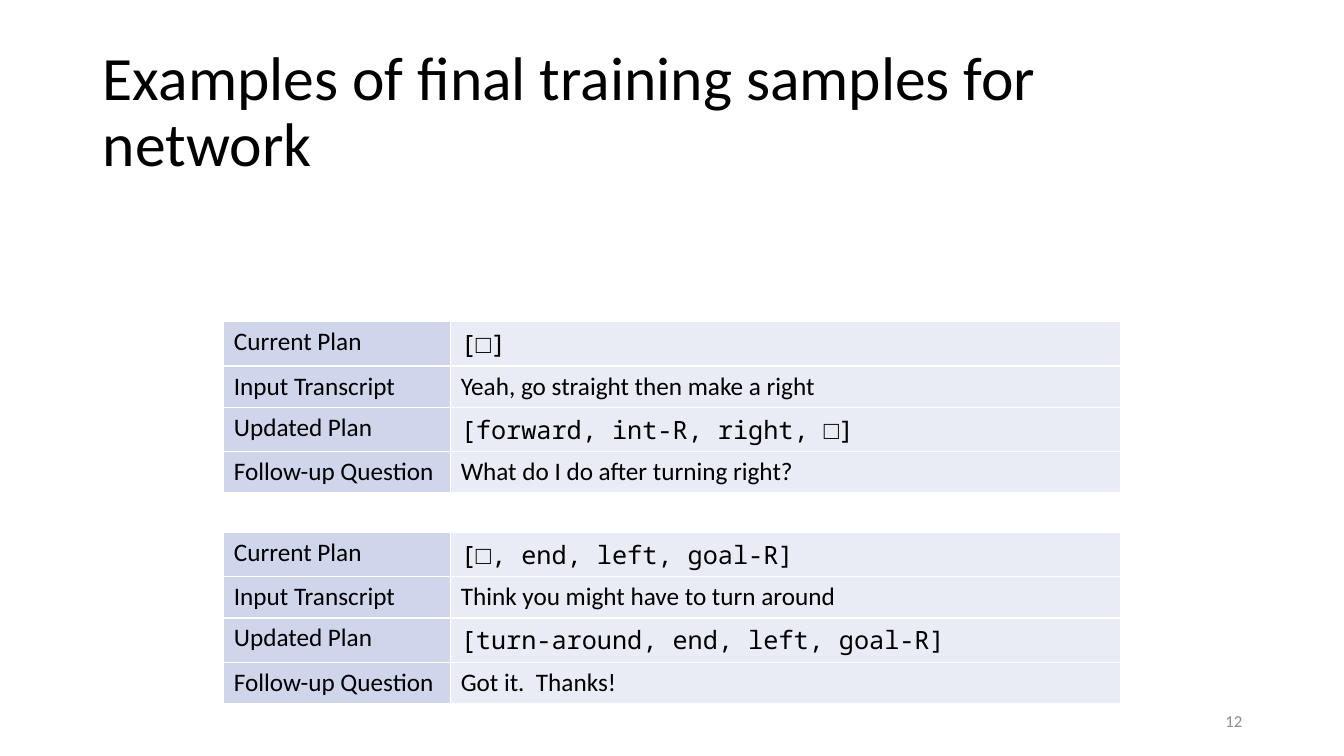
from lxml import etree
from pptx import Presentation
from pptx.dml.color import RGBColor
from pptx.enum import text
from pptx.oxml.ns import qn
from pptx.util import Inches, Pt

TITLE = "Examples of final training samples for network"
PAGE = "12"
LABELS = ["Current Plan", "Input Transcript", "Updated Plan", "Follow-up Question"]
SAMPLES = [
    ["[□]", "Yeah, go straight then make a right",
     "[forward, int-R, right, □]", "What do I do after turning right?"],
    ["[□, end, left, goal-R]", "Think you might have to turn around",
     "[turn-around, end, left, goal-R]", "Got it.  Thanks!"],
]
COLORS = {"text": "000000", "page": "8C8C8C", "label": "CFD5EA",
          "value": "E9EBF5", "border": "FFFFFF"}
SANS, MONO = "Calibri", "Noto Sans Mono"

# Layout in inches
TABLE_LEFT, TABLE_TOP, TABLE_STEP = 2.22, 3.19, 2.09
COL_WIDTHS, ROW_HEIGHT = [2.25, 6.64], 0.41


def write(tf, content, size=18, font=SANS, color="text",
          align=text.PP_ALIGN.LEFT, spacing=1.0):
    p = tf.paragraphs[0]
    p.alignment, p.line_spacing = align, spacing
    r = p.add_run()
    r.text = content
    r.font.size, r.font.name = Pt(size), font
    r.font.color.rgb = RGBColor.from_string(COLORS[color])


def style_cell(cell, fill):
    cell.fill.solid()
    cell.fill.fore_color.rgb = RGBColor.from_string(COLORS[fill])
    tcPr = cell._tc.get_or_add_tcPr()
    for i, side in enumerate(("lnL", "lnR", "lnT", "lnB")):
        ln = etree.Element(qn(f"a:{side}"), w=str(Pt(1)))
        solid = etree.SubElement(ln, qn("a:solidFill"))
        etree.SubElement(solid, qn("a:srgbClr"), val=COLORS["border"])
        tcPr.insert(i, ln)


def add_sample(slide, values, top):
    table = slide.shapes.add_table(
        len(LABELS), len(COL_WIDTHS), Inches(TABLE_LEFT), Inches(top),
        Inches(sum(COL_WIDTHS)), Inches(ROW_HEIGHT * len(LABELS))).table
    table.first_row = table.horz_banding = False
    for col, width in zip(table.columns, COL_WIDTHS):
        col.width = Inches(width)
    for row, (label, value) in enumerate(zip(LABELS, values)):
        font = MONO if label.endswith("Plan") else SANS
        for col, (content, face, fill) in enumerate(
                [(label, SANS, "label"), (value, font, "value")]):
            cell = table.cell(row, col)
            style_cell(cell, fill)
            write(cell.text_frame, content, font=face)


def main():
    prs = Presentation()
    prs.slide_width, prs.slide_height = Inches(13.33), Inches(7.5)
    slide = prs.slides.add_slide(prs.slide_layouts[5])

    # Title
    title = slide.shapes.title
    title.left, title.top = Inches(0.92), Inches(0.4)
    title.width, title.height = Inches(11.5), Inches(1.45)
    tf = title.text_frame
    tf.auto_size, tf.word_wrap = text.MSO_AUTO_SIZE.NONE, True
    tf.vertical_anchor = text.MSO_ANCHOR.MIDDLE
    write(tf, TITLE, size=44, spacing=0.9)

    # Training samples
    for i, values in enumerate(SAMPLES):
        add_sample(slide, values, TABLE_TOP + i * TABLE_STEP)

    # Page number
    sp = slide.shapes.add_textbox(Inches(9.42), Inches(6.95), Inches(3), Inches(0.4))
    tf = sp.text_frame
    tf.word_wrap, tf.vertical_anchor = True, text.MSO_ANCHOR.MIDDLE
    write(tf, PAGE, size=12, color="page", align=text.PP_ALIGN.RIGHT)

    prs.save("out.pptx")


if __name__ == "__main__":
    main()
